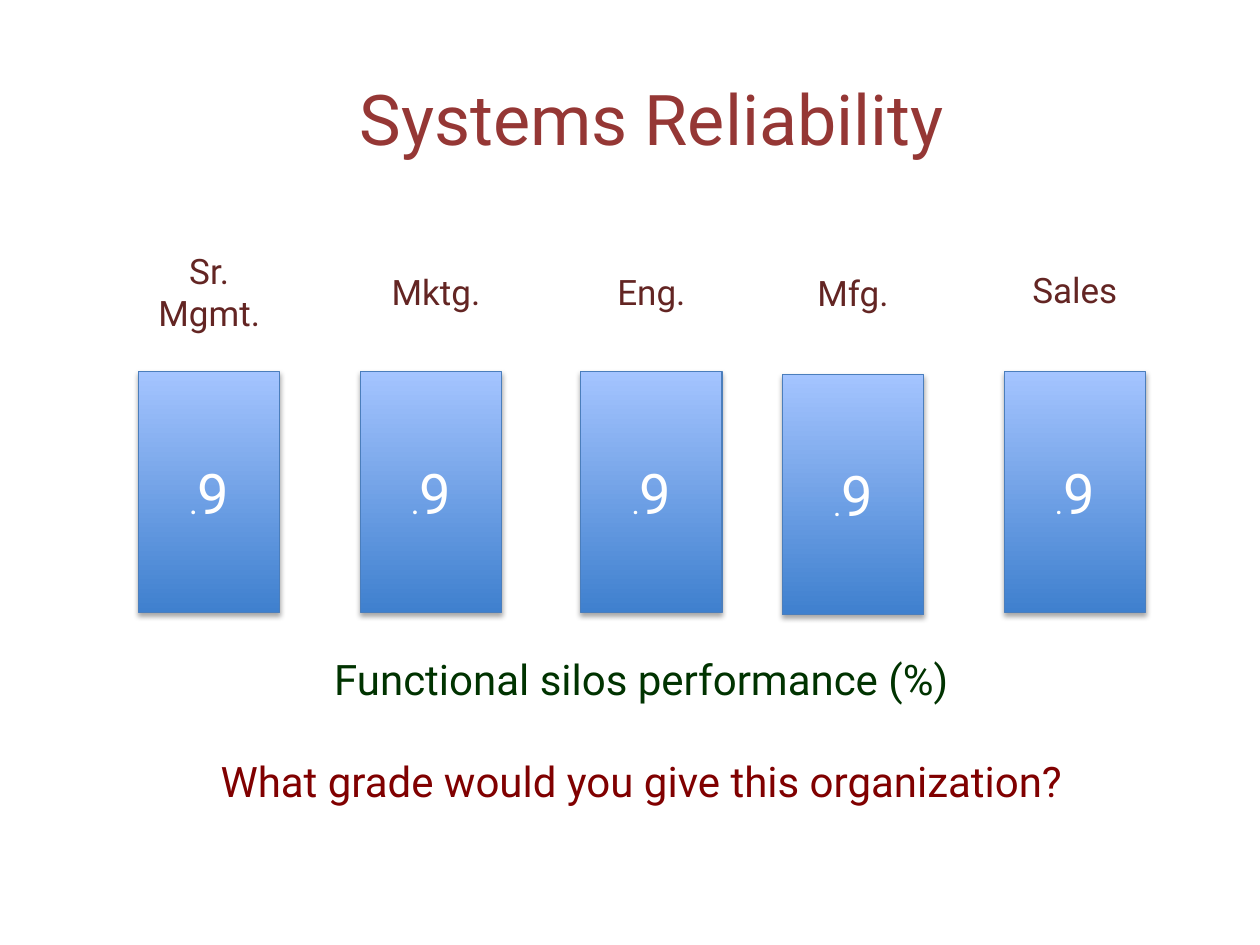
from lxml.etree import SubElement
from pptx import Presentation
from pptx.dml.color import RGBColor
from pptx.enum.shapes import MSO_SHAPE
from pptx.enum.text import MSO_ANCHOR, MSO_AUTO_SIZE, PP_ALIGN
from pptx.oxml.ns import qn
from pptx.util import Inches, Pt

TITLE = "Systems Reliability"
SILOS = [
    {"name": "Sr. Mgmt.", "left": 1.1, "top": 2.95, "label": (1.1, 1.69), "dot": "Calibri"},
    {"name": "Mktg.", "left": 2.86, "top": 2.95, "label": (2.9, 1.69), "dot": "Calibri"},
    {"name": "Eng.", "left": 4.61, "top": 2.95, "label": (4.61, 1.69), "dot": "Roboto"},
    {"name": "Mfg.", "left": 6.21, "top": 2.97, "label": (6.21, 1.7), "dot": "Roboto"},
    {"name": "Sales", "left": 7.97, "top": 2.95, "label": (7.97, 1.67), "dot": "Roboto"},
]
SCORE = (".", "9")
CAPTION = "Functional silos performance (%)"
QUESTION = "What grade would you give this organization?"

FONT = "Roboto"
SILO_WIDTH, SILO_HEIGHT, LABEL_HEIGHT = 1.12, 1.91, 1.25
COLORS = {
    "title": "953735",
    "label": "632523",
    "score": "FFFFFF",
    "caption": "003300",
    "question": "800000",
    "silo_bottom": "3F80CE",
    "silo_top": "A4C4FF",
    "silo_line": "4B7EBC",
    "shadow": "000000",
}


def color(part):
    return RGBColor.from_string(COLORS[part])


def add_run(paragraph, text, size, part, font=FONT):
    paragraph.alignment = PP_ALIGN.CENTER
    run = paragraph.add_run()
    run.text = text
    run.font.size = Pt(size)
    run.font.name = font
    run.font.color.rgb = color(part)


def prepare(frame, anchor=MSO_ANCHOR.MIDDLE, auto_size=MSO_AUTO_SIZE.NONE):
    frame.word_wrap = True
    frame.auto_size = auto_size
    frame.vertical_anchor = anchor
    return frame.paragraphs[0]


def add_shadow(shape):
    shape.shadow.inherit = False
    effects = shape._element.spPr.find(qn("a:effectLst"))
    outer = SubElement(effects, qn("a:outerShdw"), blurRad=str(Pt(3.1)),
                       dist=str(Pt(1.8)), dir="5400000", rotWithShape="0")
    tone = SubElement(outer, qn("a:srgbClr"), val=COLORS["shadow"])
    SubElement(tone, qn("a:alpha"), val="35000")


def add_silo(slide, silo):
    bar = slide.shapes.add_shape(
        MSO_SHAPE.RECTANGLE, Inches(silo["left"]), Inches(silo["top"]),
        Inches(SILO_WIDTH), Inches(SILO_HEIGHT))
    bar.fill.gradient()
    bar.fill.gradient_angle = 90
    for stop, position, part in zip(bar.fill.gradient_stops, (0, 1), ("silo_bottom", "silo_top")):
        stop.position = position
        stop.color.rgb = color(part)
    bar.line.color.rgb = color("silo_line")
    bar.line.width = Pt(0.75)
    add_shadow(bar)
    score = prepare(bar.text_frame)
    dot, digit = SCORE
    add_run(score, dot, 18, "score", silo["dot"])
    add_run(score, digit, 32, "score")

    left, top = silo["label"]
    label = slide.shapes.add_textbox(
        Inches(left), Inches(top), Inches(SILO_WIDTH), Inches(LABEL_HEIGHT))
    add_run(prepare(label.text_frame), silo["name"], 20, "label")


def main():
    deck = Presentation()
    deck.slide_width, deck.slide_height = Inches(10), Inches(7.5)
    slide = deck.slides.add_slide(deck.slide_layouts[5])

    title = slide.shapes.title
    title.left, title.top = Inches(0.67), Inches(0.31)
    title.width, title.height = Inches(9), Inches(1.25)
    add_run(prepare(title.text_frame), TITLE, 40, "title")

    for silo in SILOS:
        add_silo(slide, silo)

    summary = slide.shapes.add_textbox(Inches(1.1), Inches(5.14), Inches(7.98), Inches(1.31))
    caption = prepare(summary.text_frame, MSO_ANCHOR.TOP, MSO_AUTO_SIZE.SHAPE_TO_FIT_TEXT)
    add_run(caption, CAPTION, 24, "caption")
    question = summary.text_frame.add_paragraph()
    question.space_before = Pt(29)
    add_run(question, QUESTION, 24, "question")

    deck.save("out.pptx")


if __name__ == "__main__":
    main()
